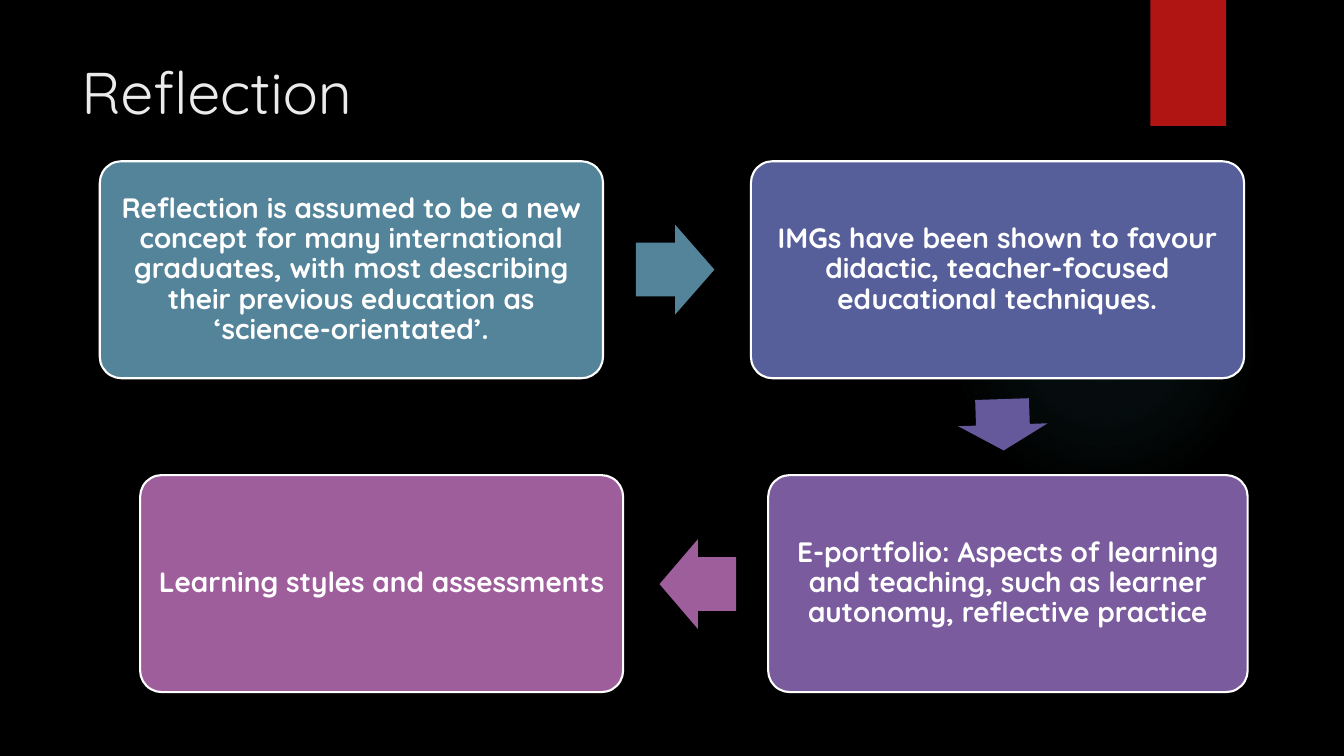
from lxml import etree
from pptx import Presentation
from pptx.dml.color import RGBColor
from pptx.enum import shapes, text
from pptx.oxml import ns
from pptx.util import Pt

FONT = "Quicksand"
BLACK = RGBColor(0x00, 0x00, 0x00)
WHITE = RGBColor(0xFF, 0xFF, 0xFF)
PALE = RGBColor(0xEB, 0xEB, 0xEB)
RED = RGBColor(0xB0, 0x15, 0x13)
TEAL = RGBColor(0x54, 0x84, 0x9A)
BLUE = RGBColor(0x57, 0x5F, 0x9B)
INDIGO = RGBColor(0x65, 0x59, 0x9C)
VIOLET = RGBColor(0x7A, 0x5B, 0x9D)
PLUM = RGBColor(0x9E, 0x5E, 0x9B)
GLOW = RGBColor(0x50, 0xB9, 0xC1)

KIND = shapes.MSO_SHAPE
TOP, LOW, TALL = 115.2, 339.4, 155  # the two rows of steps
BOX = {"word_wrap": True, "vertical_anchor": text.MSO_ANCHOR.MIDDLE,
       "margin_left": Pt(5.5), "margin_right": Pt(5.5),
       "margin_top": Pt(6), "margin_bottom": Pt(6)}
HEAD = {"word_wrap": True, "vertical_anchor": text.MSO_ANCHOR.TOP,
        "auto_size": text.MSO_AUTO_SIZE.NONE}
PARA = {"alignment": text.PP_ALIGN.CENTER, "line_spacing": 0.9}

# Left, top, width, fill and wording of each step
STEPS = [
    (71.3, TOP, 359.5, TEAL,
     "Reflection is assumed to be a new concept for many international "
     "graduates, with most describing their previous education as "
     "‘science-orientated’."),
    (536.4, TOP, 352.3, BLUE,
     "IMGs have been shown to favour didactic, teacher-focused "
     "educational techniques."),
    (548.7, LOW, 342.5, VIOLET,
     "E-portfolio: Aspects of learning and teaching, such as learner "
     "autonomy, reflective practice"),
    (100.1, LOW, 345, PLUM, "Learning styles and assessments"),
]
# Left, top, width, turn and fill of each arrow
ARROWS = [
    (454.3, 160.6, 56, 0, TEAL),
    (698, 271.4, 36.7, 88.1, INDIGO),
    (471.1, 385.2, 54.7, 180, PLUM),
]


def style(item, values):
    for name, value in values.items():
        setattr(item, name, value)


def ink(font, size, color, bold):
    style(font, {"name": FONT, "size": Pt(size), "bold": bold})
    font.color.rgb = color


def shape(slide, kind, place, color):
    item = slide.shapes.add_shape(kind, *map(Pt, place))
    item.shadow.inherit = False
    item.fill.solid()
    item.fill.fore_color.rgb = color
    item.line.fill.background()
    return item


def glow(slide, place, color):
    item = shape(slide, KIND.OVAL, place, color)
    # A round fade from the centre outwards
    stops = "".join(
        f'<a:gs pos="{pos}000"><a:srgbClr val="{color}">'
        f'<a:alpha val="{alpha}000"/></a:srgbClr></a:gs>'
        for pos, alpha in [(0, 7), (36, 6), (69, 0)])
    fade = etree.fromstring(
        f'<a:gradFill {ns.nsdecls("a")}><a:gsLst>{stops}</a:gsLst>'
        '<a:path path="circle"><a:fillToRect l="50000" t="50000" '
        'r="50000" b="50000"/></a:path></a:gradFill>')
    props = item.element.spPr
    props.replace(props.find(ns.qn("a:solidFill")), fade)


def title(slide, place, words):
    item = slide.shapes.title
    style(item, dict(zip(("left", "top", "width", "height"), map(Pt, place))))
    frame = item.text_frame
    style(frame, HEAD)
    frame.text = words
    para = frame.paragraphs[0]
    para.alignment = text.PP_ALIGN.LEFT
    ink(para.font, 42, PALE, False)


def step(slide, left, top, width, color, words):
    item = shape(slide, KIND.ROUNDED_RECTANGLE, (left, top, width, TALL), color)
    item.adjustments[0] = 0.1
    item.line.color.rgb = WHITE
    item.line.width = Pt(1.5)
    frame = item.text_frame
    style(frame, BOX)
    frame.text = words
    para = frame.paragraphs[0]
    style(para, PARA)
    ink(para.font, 20, WHITE, True)


def arrow(slide, left, top, width, turn, color):
    item = shape(slide, KIND.RIGHT_ARROW, (left, top, width, 64), color)
    item.adjustments[0] = 0.6
    item.adjustments[1] = 0.5
    item.rotation = turn


def main():
    deck = Presentation()
    deck.slide_width, deck.slide_height = Pt(960), Pt(540)
    slide = deck.slides.add_slide(deck.slide_layouts[5])

    # Backdrop
    slide.background.fill.solid()
    slide.background.fill.fore_color.rgb = BLACK
    glow(slide, (677.5, 131.8, 221.8, 221.8), GLOW)
    shape(slide, KIND.RECTANGLE, (821.8, 0, 54, 90), RED)

    # Heading
    title(slide, (51, 36, 741, 110), "Reflection")

    # Flow of steps
    for row in STEPS:
        step(slide, *row)
    for row in ARROWS:
        arrow(slide, *row)

    deck.save("out.pptx")


if __name__ == "__main__":
    main()
